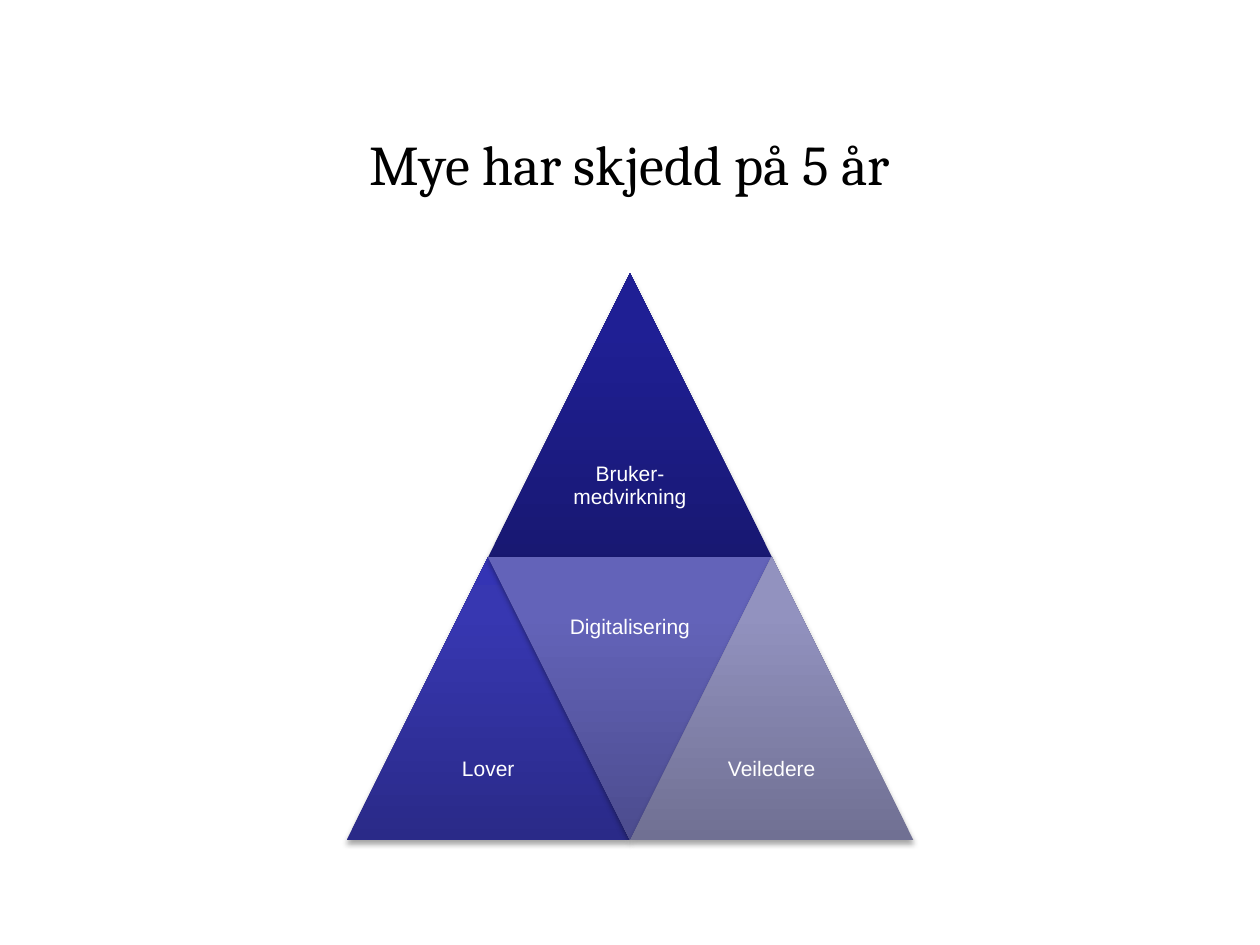
"""Build a slide with a triangle made of four labelled triangles."""
import copy
from dataclasses import dataclass

import pptx
import pptx.dml.color
import pptx.enum.shapes
import pptx.enum.text
import pptx.oxml
import pptx.oxml.ns
import pptx.slide
import pptx.text.text
import pptx.util

Inches = pptx.util.Inches
Pt = pptx.util.Pt
RGBColor = pptx.dml.color.RGBColor
qn = pptx.oxml.ns.qn

BLACK = RGBColor(0x00, 0x00, 0x00)
WHITE = RGBColor(0xFF, 0xFF, 0xFF)
NAVY = (RGBColor(0x18, 0x18, 0x72), RGBColor(0x1F, 0x1F, 0x94), RGBColor(0x1D, 0x1D, 0x97))
BLUE = (RGBColor(0x2A, 0x2A, 0x88), RGBColor(0x37, 0x37, 0xB1), RGBColor(0x34, 0x34, 0xB4))
VIOLET = (RGBColor(0x4C, 0x4C, 0x8E), RGBColor(0x63, 0x63, 0xB9), RGBColor(0x62, 0x62, 0xBB))
GREY = (RGBColor(0x70, 0x70, 0x93), RGBColor(0x92, 0x92, 0xBF), RGBColor(0x91, 0x91, 0xC0))
STOPS = (0, 0.8, 1)

SIDE = 2.25
LEFT = 2.75
TOP = 2.17
SHADOW = (
    f'<a:effectLst {pptx.oxml.ns.nsdecls("a")}>'
    '<a:outerShdw blurRad="40000" dist="23000" dir="5400000" rotWithShape="0">'
    '<a:srgbClr val="000000"><a:alpha val="35000"/></a:srgbClr>'
    '</a:outerShdw></a:effectLst>'
)


@dataclass
class Part:
    """One triangle, placed by half sides across and whole sides down."""
    label: str
    col: int
    row: int
    tones: tuple[RGBColor, RGBColor, RGBColor]
    down: bool = False


PARTS = (
    Part("Bruker-medvirkning", 1, 0, NAVY),
    Part("Lover", 0, 1, BLUE),
    Part("Digitalisering", 1, 1, VIOLET, True),
    Part("Veiledere", 2, 1, GREY),
)


def style(font: pptx.text.text.Font, name: str, size: float, tone: RGBColor) -> None:
    """Set the face, size and colour of a font."""
    font.name = name
    font.size = Pt(size)
    font.color.rgb = tone


def add_part(slide: pptx.slide.Slide, part: Part) -> None:
    """Draw one triangle with its gradient, shadow and label."""
    half = SIDE / 2
    left, top = LEFT + part.col * half, TOP + part.row * SIDE
    shape = slide.shapes.add_shape(
        pptx.enum.shapes.MSO_SHAPE.ISOSCELES_TRIANGLE,
        Inches(left), Inches(top), Inches(SIDE), Inches(SIDE))
    shape.rotation = 180 if part.down else 0
    shape.line.fill.background()
    shape.fill.gradient()
    shape.fill.gradient_angle = 90
    props = shape._element.spPr
    props.find(qn("a:gradFill")).set("rotWithShape", "0")
    first = props.find(".//" + qn("a:gs"))
    first.addnext(copy.deepcopy(first))
    for stop, place, tone in zip(shape.fill.gradient_stops, STOPS, part.tones):
        stop.position = place
        stop.color.rgb = tone
    props.append(pptx.oxml.parse_xml(SHADOW))

    drop = 0 if part.down else half
    box = slide.shapes.add_textbox(
        Inches(left + half / 2), Inches(top + drop), Inches(half), Inches(half))
    frame = box.text_frame
    frame.word_wrap = True
    frame.vertical_anchor = pptx.enum.text.MSO_ANCHOR.MIDDLE
    frame.margin_left = frame.margin_right = Inches(0.05)
    frame.margin_top = frame.margin_bottom = Inches(0.05)
    frame.text = part.label
    line = frame.paragraphs[0]
    line.alignment = pptx.enum.text.PP_ALIGN.CENTER
    line.line_spacing = 0.9
    line.space_after = Pt(4.2)
    style(line.runs[0].font, "Arial", 12, WHITE)


def add_title(slide: pptx.slide.Slide, text: str) -> None:
    """Place and format the title."""
    title = slide.shapes.title
    title.left, title.top = Inches(0.75), Inches(0.67)
    title.width, title.height = Inches(8.5), Inches(1.25)
    frame = title.text_frame
    frame.text = text
    frame.vertical_anchor = pptx.enum.text.MSO_ANCHOR.MIDDLE
    line = frame.paragraphs[0]
    line.alignment = pptx.enum.text.PP_ALIGN.CENTER
    style(line.runs[0].font, "Cambria", 32, BLACK)


def main() -> None:
    """Build and save the deck."""
    deck = pptx.Presentation()
    deck.slide_width, deck.slide_height = Inches(10), Inches(7.5)
    slide = deck.slides.add_slide(deck.slide_layouts[5])
    add_title(slide, "Mye har skjedd på 5 år")
    for part in PARTS:
        add_part(slide, part)
    deck.save("out.pptx")


if __name__ == "__main__":
    main()
